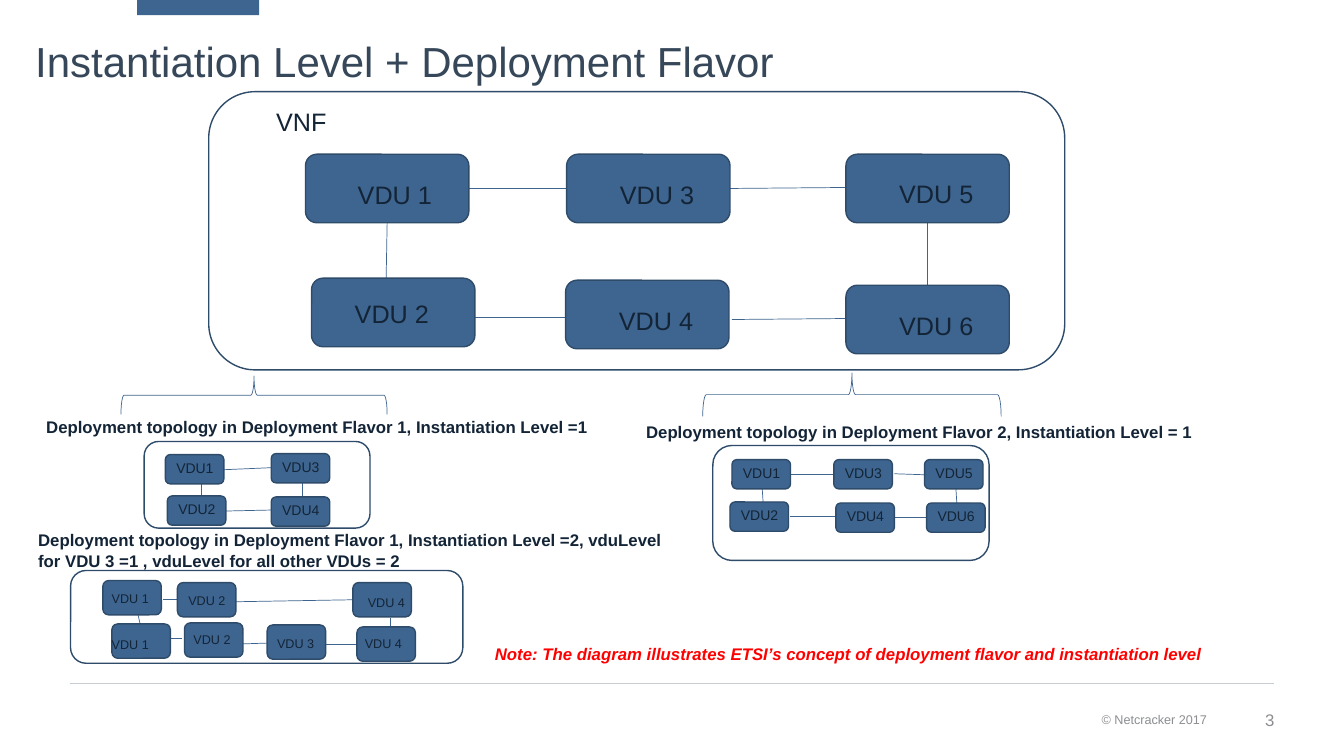
"""Builds the slide on instantiation levels and deployment flavors."""
import pptx
import pptx.dml.color
import pptx.enum.shapes
import pptx.enum.text
import pptx.oxml.ns
import pptx.util
from lxml import etree

SHAPES = pptx.enum.shapes.MSO_SHAPE
ALIGN = pptx.enum.text.PP_ALIGN
ANCHOR = pptx.enum.text.MSO_ANCHOR

COLUMNS, ROWS = 133.3, 75
BLUE, OUTLINE, INK = "3E658F", "2E4B6A", "132437"
TITLE, GREY, RULE, RED = "364759", "8C8E91", "C7CDD2", "FF0000"
INSETS = (1, 0.5, 0, 0.5)


def cells(count):
    """Return the length of a number of grid cells, ten to the inch."""
    return pptx.util.Inches(count / 10)


def color(value):
    """Return the colour of a hex string."""
    return pptx.dml.color.RGBColor.from_string(value)


def add_text(slide, box, text, size, ink=INK, bold=False, italic=False,
             align=ALIGN.LEFT, anchor=ANCHOR.TOP, insets=INSETS, spacing=None):
    """Place text in a box, one paragraph for each line."""
    frame = slide.shapes.add_textbox(*map(cells, box)).text_frame
    frame.word_wrap = True
    frame.vertical_anchor = anchor
    (frame.margin_left, frame.margin_top,
     frame.margin_right, frame.margin_bottom) = map(cells, insets)
    frame.text = text
    for paragraph in frame.paragraphs:
        paragraph.alignment = align
        paragraph.line_spacing = spacing
        for run in paragraph.runs:
            run.font.name = "Arial"
            run.font.size = pptx.util.Pt(size)
            run.font.bold = bold
            run.font.italic = italic
            run.font.color.rgb = color(ink)


def add_shape(slide, kind, box, fill=None, line=None, width=1):
    """Place a preset shape with the given fill and line."""
    shape = slide.shapes.add_shape(kind, *map(cells, box))
    shape.shadow.inherit = False
    if fill:
        shape.fill.solid()
        shape.fill.fore_color.rgb = color(fill)
    else:
        shape.fill.background()
    if line:
        shape.line.color.rgb = color(line)
        shape.line.width = pptx.util.Pt(width)
    else:
        shape.line.fill.background()
    return shape


def add_line(slide, ends, line=BLUE, width=0.5):
    """Draw a straight line between two points."""
    connector = slide.shapes.add_connector(
        pptx.enum.shapes.MSO_CONNECTOR.STRAIGHT, *map(cells, ends))
    connector.line.color.rgb = color(line)
    connector.line.width = pptx.util.Pt(width)
    etree.SubElement(connector._element.spPr, pptx.oxml.ns.qn("a:effectLst"))


def add_brace(slide, box):
    """Draw a brace that fills a wide box and points up."""
    left, top, width, height = box
    upright = (left + (width - height) / 2, top + (height - width) / 2,
               height, width)
    add_shape(slide, SHAPES.RIGHT_BRACE, upright, line=BLUE,
              width=0.5).rotation = 270


def add_topology(slide, box, node_size, label_size, points, nodes, links):
    """Draw a frame with its units and links, placed from its top left."""
    left, top = box[:2]
    add_shape(slide, SHAPES.ROUNDED_RECTANGLE, box, line=OUTLINE)
    for x1, y1, x2, y2 in links:
        add_line(slide, (left + x1, top + y1, left + x2, top + y2))
    for name, x, y, _, _ in nodes:
        add_shape(slide, SHAPES.ROUNDED_RECTANGLE,
                  (left + x, top + y, *node_size), BLUE, OUTLINE)
    for name, x, y, shift_x, shift_y in nodes:
        add_text(slide, (left + x + shift_x, top + y + shift_y, *label_size),
                 name, points)


def add_vnf(slide, box):
    """Draw the full network function with six units."""
    nodes = [("VDU 1", 9.6, 6.2, 4.2, 2), ("VDU 2", 10.2, 18.5, 3.3, 1.5),
             ("VDU 3", 35.5, 6.2, 4.3, 2), ("VDU 4", 35.4, 18.7, 4.3, 2),
             ("VDU 5", 63.2, 6.2, 4.3, 1.9), ("VDU 6", 63.2, 19.2, 4.3, 2)]
    links = [(25.8, 9.6, 35.5, 9.6), (51.7, 9.6, 63.2, 9.5),
             (17.7, 13, 17.6, 18.5), (71.3, 19.2, 71.3, 12.8),
             (26.4, 22.4, 35.4, 22.4), (51.9, 22.6, 63.2, 22.5)]
    add_topology(slide, box, (16.2, 6.8), (10, 2.9), 18, nodes, links)
    add_text(slide, (box[0] + 5.7, box[1] + 1, 9.1, 4), "VNF", 18)


def add_small_topology(slide, box, places, links):
    """Draw a small topology whose units are numbered in order."""
    nodes = [(f"VDU{number}", x, y, 0.1, 0)
             for number, (x, y) in enumerate(places, 1)]
    add_topology(slide, box, (5.8, 2.9), (5.9, 2.7), 10, nodes, links)


def add_flavor_one(slide, box):
    """Draw flavor 1 at level 1 with four units."""
    places = [(2.1, 1.3), (2.3, 5.4), (12.6, 1.2), (12.6, 5.5)]
    links = [(7.9, 2.8, 12.6, 2.6), (8.1, 6.9, 12.6, 6.8),
             (15.7, 5.5, 15.7, 3.4), (5.7, 6.2, 5.7, 4.2)]
    add_small_topology(slide, box, places, links)


def add_flavor_two(slide, box):
    """Draw flavor 2 at level 1 with six units."""
    places = [(1.9, 1.4), (1.7, 5.6), (12, 1.4),
              (12.2, 5.7), (21, 1.4), (21.2, 5.7)]
    links = [(7.7, 2.9, 12, 2.9), (7.7, 7, 12.3, 7), (18, 2.8, 21, 2.9),
             (18, 7.1, 21.2, 7.1), (24.1, 4.1, 24.2, 5.7), (4.9, 4.3, 5, 5.8)]
    add_small_topology(slide, box, places, links)


def add_level_two(slide, box):
    """Draw flavor 1 at level 2, with most units doubled."""
    nodes = [("VDU 1", 3.2, 1, -0.1, 0.5), ("VDU 1", 4.1, 5.3, -1, 0.8),
             ("VDU 2", 10.6, 1.2, 0.1, 0.5), ("VDU 2", 11.3, 5.2, -0.1, 0.4),
             ("VDU 3", 19.5, 5.4, 0, 0.6),
             ("VDU 4", 28, 1.2, 0.5, 0.7), ("VDU 4", 28.4, 5.6, -0.2, 0.4)]
    links = [(9.2, 2.9, 10.7, 2.9), (9.6, 6.7, 11.1, 6.7),
             (28, 2.9, 16.4, 3.1), (19.5, 7.2, 16.4, 7.3),
             (25.3, 7.3, 28.6, 7.3), (6.6, 4, 6.9, 5.3),
             (31.7, 4.7, 31.7, 6.1)]
    add_topology(slide, box, (5.8, 3.4), (7, 2.5), 9, nodes, links)


def add_footer(slide, box):
    """Draw the rule, the copyright line and the slide number."""
    left, top, width, height = box
    right = left + width
    add_line(slide, (left, top, right, top), RULE, 1)
    for text, size, start, span in [("© Netcracker 2017", 9, 18.6, 11.9),
                                    ("3", 12, 6.7, 6.7)]:
        add_text(slide, (right - start, top + 1.6, span, height - 1.6), text,
                 size, GREY, align=ALIGN.RIGHT, anchor=ANCHOR.MIDDLE,
                 insets=(0, 0, 0, 0))


def add_captions(slide):
    """Write the captions of the topologies and the note."""
    topology = "Deployment topology in Deployment Flavor"
    for box, text in [
            ((63.1, 41.3, 63.3, 3), f"{topology} 2, Instantiation Level = 1"),
            ((3.6, 40.9, 62.6, 3), f"{topology} 1, Instantiation Level =1"),
            ((2.8, 52.1, 77.1, 5),
             f"{topology} 1, Instantiation Level =2, vduLevel\n"
             "for VDU 3 =1 , vduLevel for all other VDUs = 2")]:
        add_text(slide, box, text, 12, bold=True)
    add_text(slide, (48.1, 63.4, 81.6, 3),
             "Note: The diagram illustrates ETSI’s concept of deployment "
             "flavor and instantiation level", 12, RED, True, True)


def main():
    """Build and save the presentation."""
    presentation = pptx.Presentation()
    presentation.slide_width = cells(COLUMNS)
    presentation.slide_height = cells(ROWS)
    slide = presentation.slides.add_slide(presentation.slide_layouts[6])
    add_footer(slide, (6.9, 67.8, 119.5, 5.6))
    add_shape(slide, SHAPES.RECTANGLE, (13.6, 0, 12.1, 1.5), BLUE)
    add_text(slide, (3.5, 3.9, 115, 5.2),
             "Instantiation Level + Deployment Flavor", 30, TITLE,
             insets=(0, 0, 0, 0), spacing=0.95)
    add_vnf(slide, (20.7, 9.1, 84.9, 27.6))
    add_brace(slide, (12, 37.3, 26.4, 3.8))
    add_brace(slide, (69.7, 37, 29.6, 4.3))
    add_flavor_one(slide, (14.3, 43.8, 22.4, 8.6))
    add_flavor_two(slide, (70.7, 44.2, 27.4, 11.4))
    add_level_two(slide, (7, 56.6, 38.9, 9.2))
    add_captions(slide)
    presentation.save("out.pptx")


if __name__ == "__main__":
    main()
